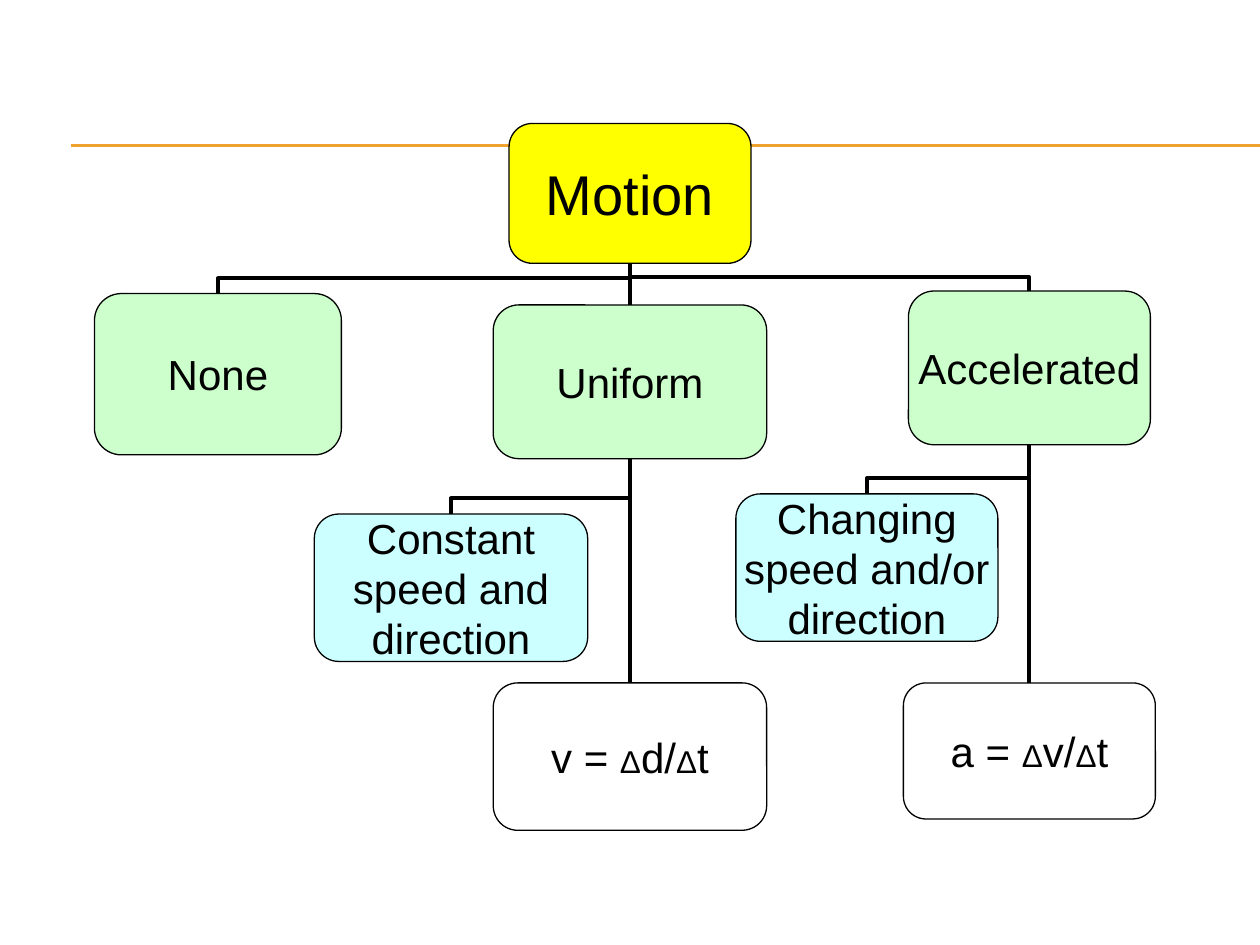
from dataclasses import dataclass
from itertools import groupby

from lxml import etree
from pptx import Presentation
from pptx.dml.color import RGBColor
from pptx.enum.shapes import MSO_CONNECTOR, MSO_SHAPE
from pptx.enum.text import MSO_ANCHOR, PP_ALIGN
from pptx.oxml.ns import qn
from pptx.util import Inches, Pt

STRAIGHT = MSO_CONNECTOR.STRAIGHT
ELBOW = MSO_CONNECTOR.ELBOW
ROUNDED = MSO_SHAPE.ROUNDED_RECTANGLE
MIDDLE = MSO_ANCHOR.MIDDLE
CENTER = PP_ALIGN.CENTER
TOP, BOTTOM = 0, 2
BLANK_LAYOUT = 6


@dataclass(frozen=True)
class Theme:
    font: str = "Arial"
    ink: str = "000000"
    rule: str = "F0A22E"
    root: str = "FFFF00"
    kind: str = "CCFFCC"
    meaning: str = "CCFFFF"
    formula: str = "FFFFFF"
    root_size: int = 32
    text_size: int = 24
    delta_size: int = 18
    thin: float = 0.75
    thick: float = 2.25


THEME = Theme()

# name: (text, centre x, top, width, height, fill)
NODES = {
    "motion": ("Motion", 5, 0.98, 1.92, 1.11, THEME.root),
    "none": ("None", 1.73, 2.33, 1.96, 1.28, THEME.kind),
    "uniform": ("Uniform", 5, 2.42, 2.17, 1.22, THEME.kind),
    "accelerated": ("Accelerated", 8.17, 2.31, 1.92, 1.22, THEME.kind),
    "velocity": ("v = Δd/Δt", 5, 5.42, 2.17, 1.17, THEME.formula),
    "acceleration": ("a = Δv/Δt", 8.17, 5.42, 2, 1.08, THEME.formula),
    "constant": ("Constant\nspeed and\ndirection", 3.58, 4.08, 2.17, 1.17, THEME.meaning),
    "changing": ("Changing\nspeed and/or\ndirection", 6.88, 3.92, 2.08, 1.17, THEME.meaning),
}
STRAIGHT_LINKS = [("motion", "uniform"), ("uniform", "velocity"),
                  ("accelerated", "acceleration")]
ELBOW_LINKS = [("motion", "none"), ("motion", "accelerated"),
               ("uniform", "constant"), ("accelerated", "changing")]


def style_line(connector, color, width):
    connector.line.color.rgb = RGBColor.from_string(color)
    connector.line.width = Pt(width)
    etree.SubElement(connector._element.spPr, qn("a:effectLst"))


def add_rule(page, top):
    rule = page.shapes.add_connector(
        STRAIGHT, Inches(0.56), Inches(top), Inches(10), Inches(top))
    style_line(rule, THEME.rule, THEME.thin)


def write_line(para, text, size):
    """Write one centred line, with each Δ in the smaller size."""
    para.alignment = CENTER
    para.font.name = THEME.font
    para.font.size = Pt(size)
    para.font.color.rgb = RGBColor.from_string(THEME.ink)
    for is_delta, letters in groupby(text, key=lambda letter: letter == "Δ"):
        span = para.add_run()
        span.text = "".join(letters)
        if is_delta:
            span.font.size = Pt(THEME.delta_size)


def add_node(page, text, center, top, width, height, fill):
    box = page.shapes.add_shape(ROUNDED, Inches(center - width / 2), Inches(top),
                                Inches(width), Inches(height))
    box.shadow.inherit = False
    box.fill.solid()
    box.fill.fore_color.rgb = RGBColor.from_string(fill)
    box.line.color.rgb = RGBColor.from_string(THEME.ink)
    box.line.width = Pt(THEME.thin)
    frame = box.text_frame
    frame.word_wrap = False
    frame.vertical_anchor = MIDDLE
    size = THEME.root_size if fill == THEME.root else THEME.text_size
    for index, line in enumerate(text.split("\n")):
        para = frame.add_paragraph() if index else frame.paragraphs[0]
        write_line(para, line, size)
    return box


def link(page, kind, parent, child):
    """Join the top of the child to the bottom of the parent."""
    connector = page.shapes.add_connector(kind, 0, 0, 0, 0)
    connector.begin_connect(child, TOP)
    connector.end_connect(parent, BOTTOM)
    style_line(connector, THEME.ink, THEME.thick)
    return connector


def link_elbow(page, parent, child):
    """Turn the elbow a quarter so that it leaves both boxes vertically."""
    connector = link(page, ELBOW, parent, child)
    child_x = child.left + child.width // 2
    parent_x = parent.left + parent.width // 2
    parent_bottom = parent.top + parent.height
    rise, run = child.top - parent_bottom, abs(child_x - parent_x)

    connector.left = (child_x + parent_x - rise) // 2
    connector.top = (child.top + parent_bottom - run) // 2
    connector.width, connector.height = rise, run

    properties = connector._element.spPr
    frame = properties.find(qn("a:xfrm"))
    for flip in ("flipH", "flipV"):
        frame.attrib.pop(flip, None)
    child_is_right = child_x > parent_x
    frame.set("rot", str((90 if child_is_right else 270) * 60000))
    if child_is_right:
        frame.set("flipH", "1")

    bend = min(0.5, Inches(0.125) / rise)
    geometry = properties.find(qn("a:prstGeom"))
    guides = geometry.find(qn("a:avLst"))
    if guides is None:
        guides = etree.SubElement(geometry, qn("a:avLst"))
    etree.SubElement(guides, qn("a:gd"), name="adj1", fmla=f"val {round(bend * 100000)}")


def main():
    deck = Presentation()
    deck.slide_width, deck.slide_height = Inches(10), Inches(7.5)
    page = deck.slides.add_slide(deck.slide_layouts[BLANK_LAYOUT])

    for top in (1.15, 1.16):
        add_rule(page, top)
    boxes = {name: add_node(page, *node) for name, node in NODES.items()}
    for parent, child in STRAIGHT_LINKS:
        link(page, STRAIGHT, boxes[parent], boxes[child])
    for parent, child in ELBOW_LINKS:
        link_elbow(page, boxes[parent], boxes[child])

    deck.save("out.pptx")


if __name__ == "__main__":
    main()
